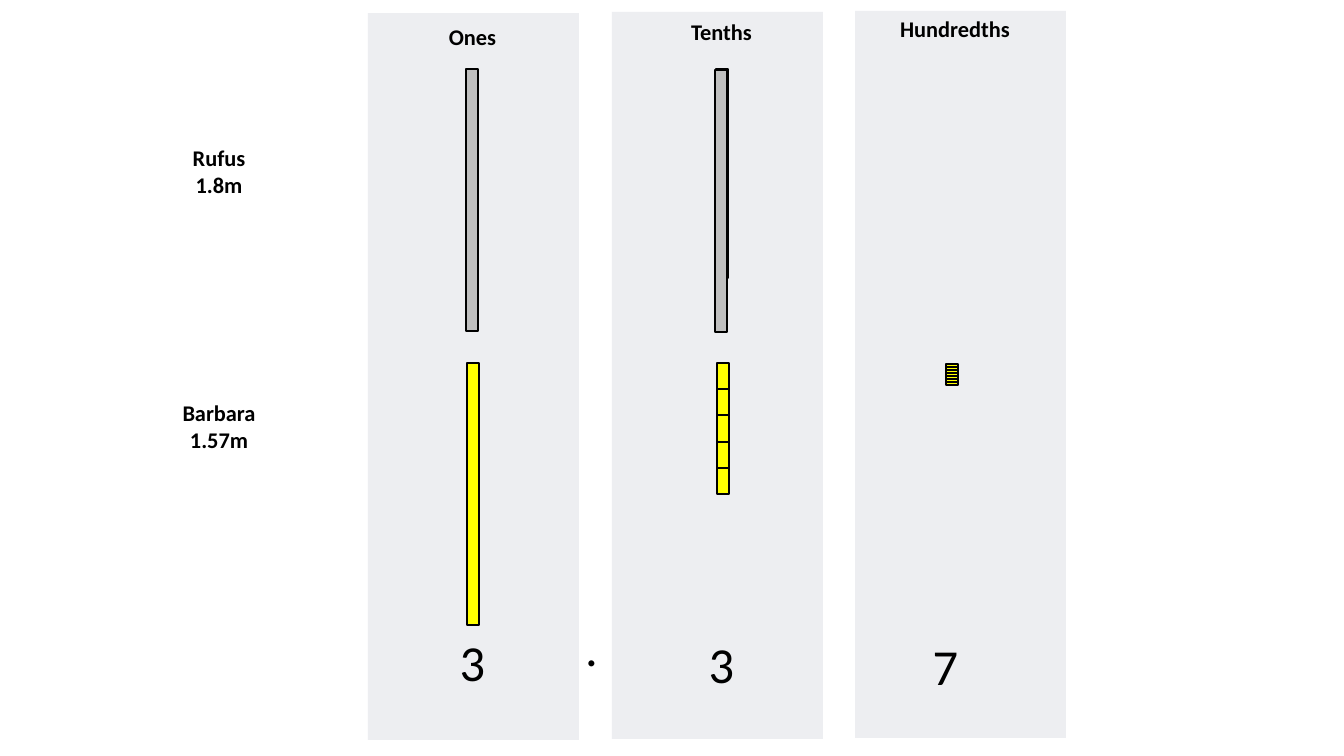
from pptx import Presentation
from pptx import util as u
from pptx.dml.color import RGBColor
from pptx.enum import shapes, text

EMU_PER_PX = 914400 / 100.8
METRE, BAR_WIDTH = 262, 12
GREY, YELLOW, PANEL, BLACK = "BFBFBF", "FFFF00", "EDEEF1", "000000"


def px(length):
    return u.Emu(round(length * EMU_PER_PX))


def colour(value):
    return RGBColor.from_string(value)


def add_rect(page, left, top, width, height, fill=None, line=None):
    box = page.shapes.add_shape(
        shapes.MSO_SHAPE.RECTANGLE, px(left), px(top), px(width), px(height))
    box.shadow.inherit = False
    if fill:
        box.fill.solid()
        box.fill.fore_color.rgb = colour(fill)
    else:
        box.fill.background()
    if line:
        box.line.color.rgb = colour(line)
        box.line.width = u.Pt(1)
    else:
        box.line.fill.background()


def add_label(page, left, top, width, height, lines, size=16, bold=True):
    box = page.shapes.add_textbox(px(left), px(top), px(width), px(height))
    frame = box.text_frame
    frame.word_wrap = True
    for index, line in enumerate(lines):
        para = frame.paragraphs[0] if index == 0 else frame.add_paragraph()
        para.alignment = text.PP_ALIGN.CENTER
        span = para.add_run()
        span.text = line
        span.font.name = "Calibri"
        span.font.size = u.Pt(size)
        span.font.bold = bold
        span.font.color.rgb = colour(BLACK)


def add_digit(page, left, top, digit):
    add_label(page, left, top, 97, 72, [digit], size=36, bold=False)


def add_bar(page, left, top, length, parts=1, fill=None):
    """A vertical bar cut into equal parts."""
    for index in range(parts):
        start = round(index * length / parts)
        end = round((index + 1) * length / parts)
        add_rect(page, left, top + start, BAR_WIDTH, end - start, fill, BLACK)


def add_column(page, left, top, heading, heading_box, digit, digit_box):
    """A place-value panel; the inner boxes are relative to its corner."""
    add_rect(page, left, top, 211, 727, PANEL)
    x, y, width = heading_box
    add_label(page, left + x, top + y, width, 37, [heading])
    x, y = digit_box
    add_digit(page, left + x, top + y, digit)


def add_bars(page, rufus_top, barbara_top):
    # Rufus: 1 one and 8 tenths
    add_bar(page, 466, rufus_top, METRE, fill=GREY)
    add_bar(page, 716, rufus_top, METRE * 8 // 10, parts=8)
    add_bar(page, 715, rufus_top + 1, METRE, fill=GREY)
    # Barbara: 1 one, 5 tenths and 7 hundredths
    add_bar(page, 467, barbara_top, METRE, fill=YELLOW)
    add_bar(page, 717, barbara_top, METRE // 2, parts=5, fill=YELLOW)
    add_bar(page, 946, barbara_top + 1, 21, parts=7, fill=YELLOW)


def build_slide(deck):
    page = deck.slides.add_slide(deck.slide_layouts[6])
    # Place-value columns
    add_column(page, 368, 13, "Ones", (56, 5, 97), "3", (56, 613))
    add_column(page, 612, 12, "Tenths", (61, 1, 97), "3", (61, 616))
    add_column(page, 855, 11, "Hundredths", (27, -1, 146), "7", (42, 619))
    add_digit(page, 543, 611, ".")
    # Row names
    for top, name, height in ((139, "Rufus", "1.8m"), (394, "Barbara", "1.57m")):
        add_label(page, 156, top, 126, 64, [name, height])
    # Length bars
    add_bars(page, 69, 363)


def main():
    deck = Presentation()
    deck.slide_width, deck.slide_height = px(1344), px(756)
    build_slide(deck)
    deck.save("out.pptx")


if __name__ == "__main__":
    main()
